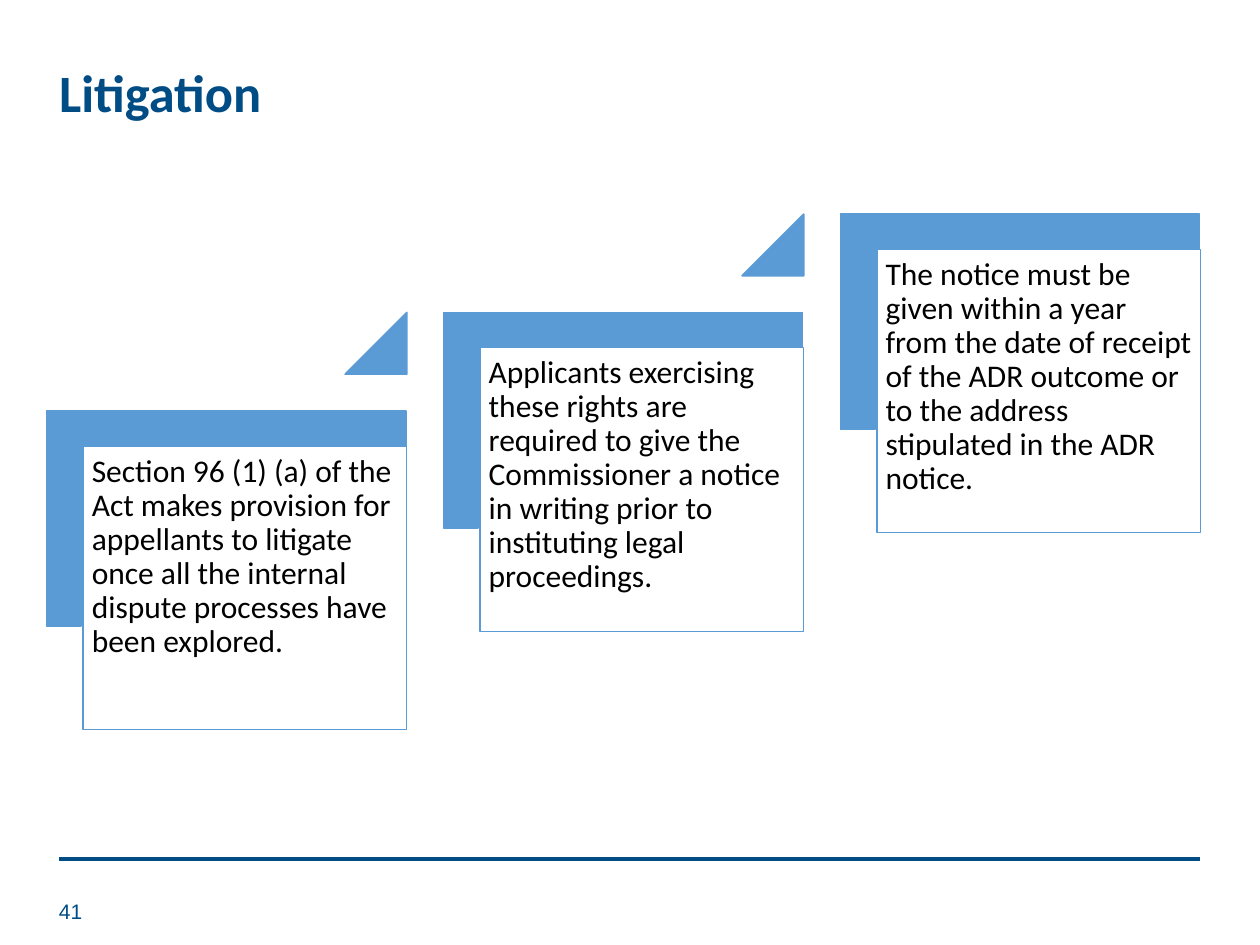
from lxml.etree import SubElement
from pptx import Presentation
from pptx.dml.color import RGBColor
from pptx.enum.shapes import MSO_CONNECTOR, MSO_SHAPE
from pptx.enum.text import MSO_ANCHOR, PP_ALIGN
from pptx.oxml.ns import qn
from pptx.util import Pt

NAVY = RGBColor(0x00, 0x4C, 0x85)
BLUE = RGBColor(0x5B, 0x9B, 0xD5)
BLACK = RGBColor(0x00, 0x00, 0x00)

TITLE = "Litigation"
PAGE_NUMBER = "41"
STEPS = [
    "Section 96 (1) (a) of the Act makes provision for appellants to litigate "
    "once all the internal dispute processes have been explored.",
    "Applicants exercising these rights are required to give the Commissioner "
    "a notice in writing prior to instituting legal proceedings.",
    "The notice must be given within a year from the date of receipt of the ADR "
    "outcome or to the address stipulated in the ADR notice.",
]

# Places of the first step; each later step moves right and up
CORNER = (67.7, 193.7, 123.1, 205.2)
CARD = (47.5, 254.9, 185, 162)
TRIANGLE = (197.3, 178.6, 35.2, 35.2)
STEP_RIGHT, STEP_UP = 226.8, 56.2


def write(shape, text, size=18, font="Calibri", color=BLACK, bold=False,
          anchor=MSO_ANCHOR.TOP, spacing=0.9, inset=None):
    frame = shape.text_frame
    frame.word_wrap = True
    frame.vertical_anchor = anchor
    if inset is not None:
        frame.margin_left = frame.margin_right = Pt(inset)
        frame.margin_top = frame.margin_bottom = Pt(inset)
    para = frame.paragraphs[0]
    para.alignment = PP_ALIGN.LEFT
    para.line_spacing = spacing
    span = para.add_run()
    span.text = text
    span.font.size = Pt(size)
    span.font.name = font
    span.font.bold = bold
    span.font.color.rgb = color


def add_step_shape(page, preset, place, index, filled=True, line_width=1):
    left, top, width, height = place
    shape = page.shapes.add_shape(
        preset, Pt(left + index * STEP_RIGHT), Pt(top - index * STEP_UP),
        Pt(width), Pt(height))
    shape.shadow.inherit = False
    if filled:
        shape.fill.solid()
        shape.fill.fore_color.rgb = BLUE
    else:
        shape.fill.background()
    shape.line.color.rgb = BLUE
    shape.line.width = Pt(line_width)
    return shape


def add_step(page, index, text):
    corner = add_step_shape(page, MSO_SHAPE.CORNER, CORNER, index)
    corner.rotation = 90
    corner.adjustments[0] = corner.adjustments[1] = 0.16
    card = add_step_shape(page, MSO_SHAPE.RECTANGLE, CARD, index,
                          filled=False, line_width=0.75)
    write(card, text, inset=5)
    if index < len(STEPS) - 1:
        triangle = add_step_shape(page, MSO_SHAPE.ISOSCELES_TRIANGLE, TRIANGLE, index)
        triangle.adjustments[0] = 1


def main():
    deck = Presentation()
    deck.slide_width, deck.slide_height = Pt(720), Pt(540)
    page = deck.slides.add_slide(deck.slide_layouts[5])

    rule = page.shapes.add_connector(
        MSO_CONNECTOR.STRAIGHT, Pt(34), Pt(491), Pt(686), Pt(491))
    rule.line.color.rgb = NAVY
    rule.line.width = Pt(2)
    SubElement(rule._element.spPr, qn("a:effectLst"))

    title = page.shapes.title
    title.left, title.top, title.width, title.height = Pt(26.6), Pt(34.6), Pt(620.6), Pt(41.8)
    write(title, TITLE, size=30, color=NAVY, bold=True)

    number = page.shapes.add_textbox(Pt(26.6), Pt(506.2), Pt(33.1), Pt(28.8))
    write(number, PAGE_NUMBER, size=12, font="Arial", color=NAVY,
          anchor=MSO_ANCHOR.MIDDLE, spacing=1.0)

    for index, text in enumerate(STEPS):
        add_step(page, index, text)

    deck.save("out.pptx")


if __name__ == "__main__":
    main()
